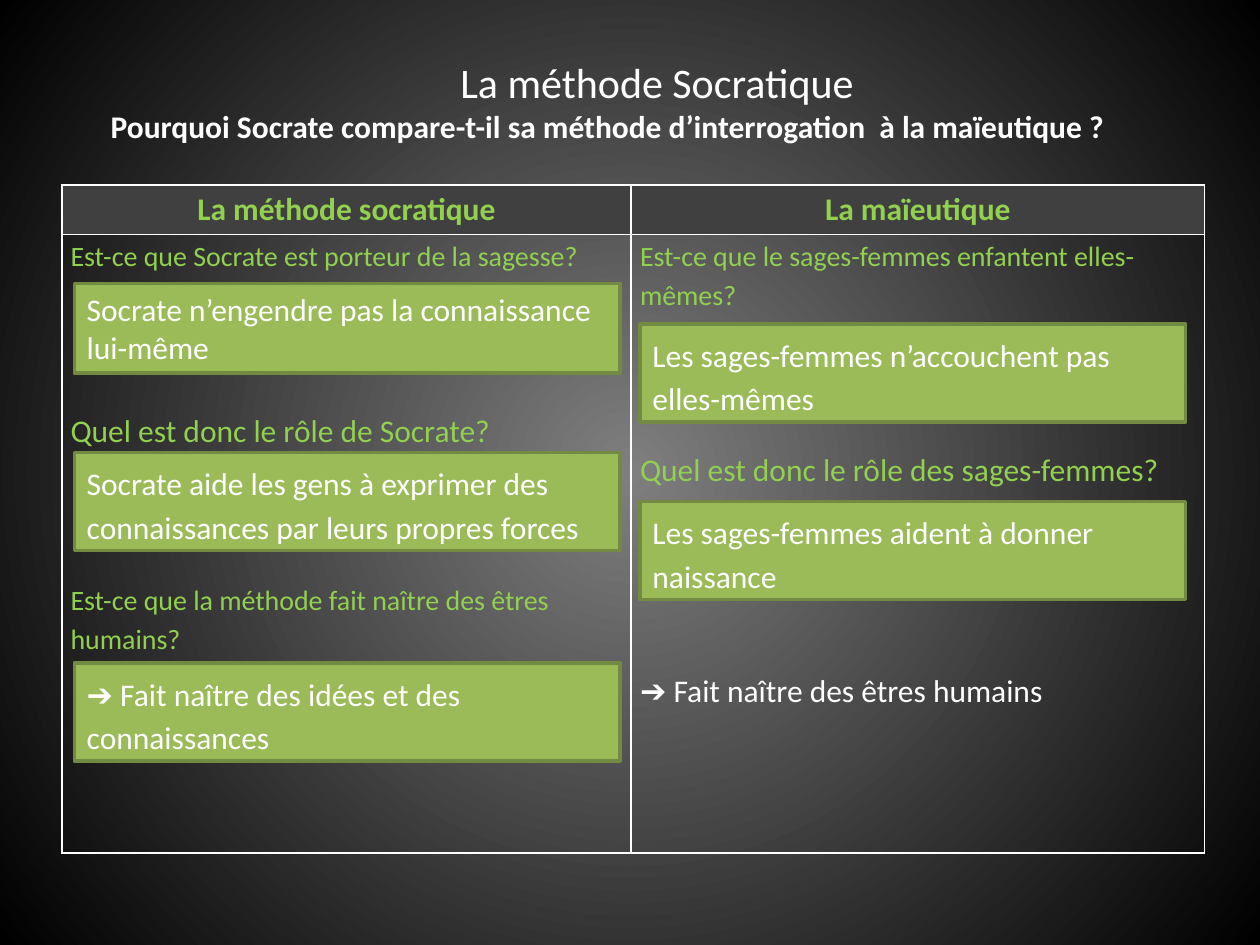
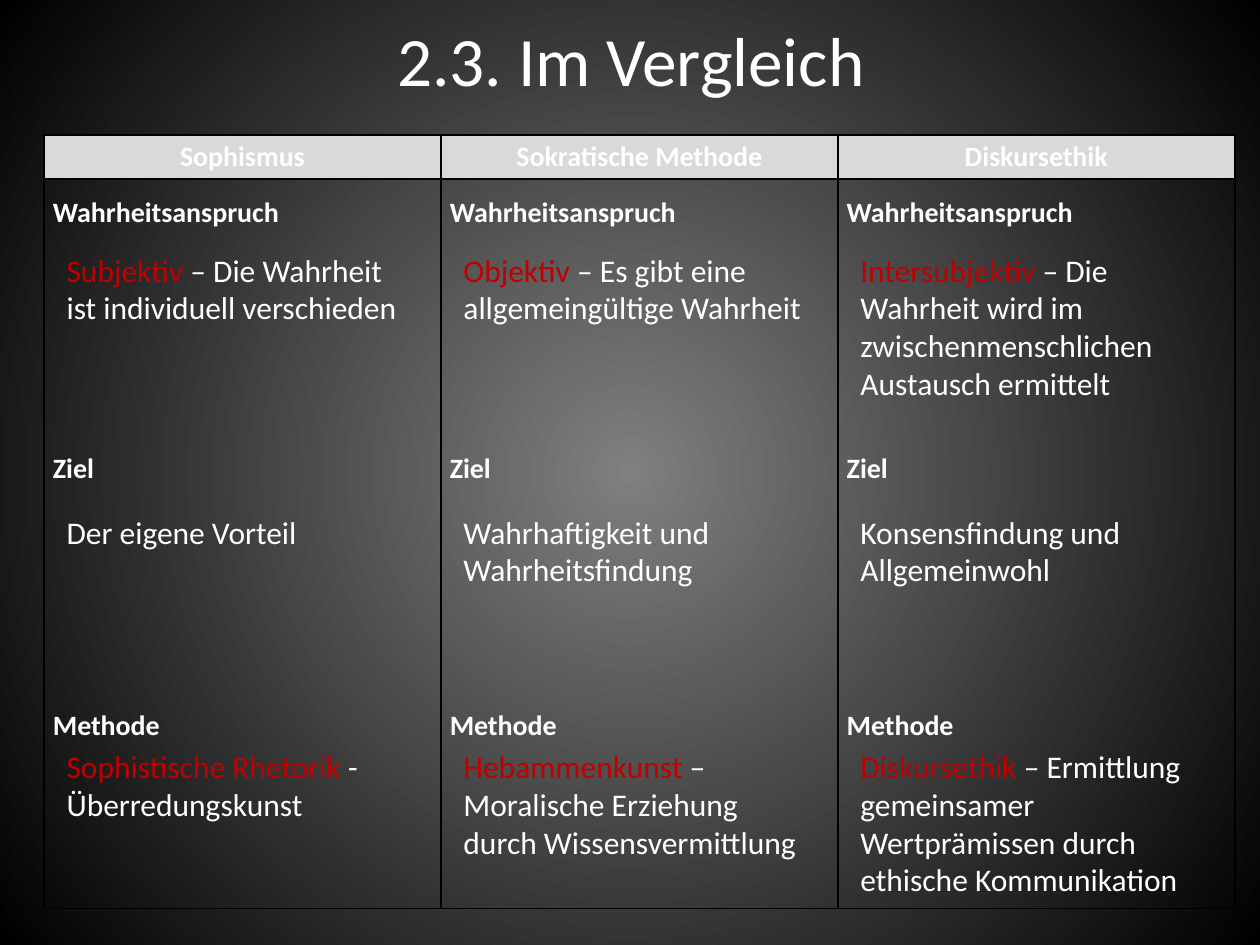
from dataclasses import dataclass

from lxml import etree
from pptx import Presentation
from pptx.dml.color import RGBColor
from pptx.enum.shapes import MSO_SHAPE
from pptx.enum.text import MSO_ANCHOR, MSO_AUTO_SIZE, PP_ALIGN
from pptx.oxml import parse_xml
from pptx.oxml.ns import nsdecls, qn
from pptx.util import Inches, Pt


@dataclass(frozen=True)
class Theme:
    font: str = "Calibri"
    white: str = "FFFFFF"
    black: str = "000000"
    glow: str = "7F7F7F"
    question: str = "92D050"
    answer_fill: str = "9BBB59"
    answer_line: str = "738A42"
    keyword: str = "C00000"
    dark_header: str = "404040"
    light_header: str = "D9D9D9"
    title: float = 39.6
    subtitle: float = 24
    body: float = 18
    small: float = 16


@dataclass(frozen=True)
class Line:
    """One paragraph; segments are (text, colour) pairs, before is a gap in points."""
    segments: tuple
    size: float
    bold: bool = False
    align: PP_ALIGN = PP_ALIGN.LEFT
    spacing: float = 1.0
    before: float = 0
    indent: float = 0


THEME = Theme()
LINE_FACTOR = 1.22  # line height of the font, in ems
CELL_INSET = 0.07

SOCRATES_SPACING = 1.15
SOCRATES_TABLE = (0.49, 1.47)
SOCRATES_COLUMNS = (4.52, 4.55)
SOCRATES_ROWS = (0.39, 4.91)
ANSWER_LEFTS = (0.59, 5.08)
ANSWER_WIDTH = 4.33

COMPARISON_SPACING = 1.5
COMPARISON_TABLE = (0.35, 1.07)
COMPARISON_COLUMN = 3.15
COMPARISON_ROWS = (0.35, 5.79)
COMPARISON_INSET = 0.08
TOPICS = ("Wahrheitsanspruch", "Ziel", "Methode")
TOPIC_TOPS = (1.94, 4.02, 5.88)
NOTE_WIDTH = 2.99

# For each topic: keyword, explanation and number of text lines, per column
NOTES = (
    (("Subjektiv", " – Die Wahrheit ist individuell verschieden", 2),
     ("Objektiv", " – Es gibt eine allgemeingültige Wahrheit", 2),
     ("Intersubjektiv",
      " – Die Wahrheit wird im zwischenmenschlichen Austausch ermittelt", 4)),
    (("", "Der eigene Vorteil", 1),
     ("", "Wahrhaftigkeit und Wahrheitsfindung", 2),
     ("", "Konsensfindung und Allgemeinwohl", 2)),
    (("Sophistische Rhetorik ", "- Überredungskunst", 2),
     ("Hebammenkunst", " – Moralische Erziehung durch Wissensvermittlung", 3),
     ("Diskursethik",
      " – Ermittlung gemeinsamer Wertprämissen durch ethische Kommunikation", 4)),
)

# For each column: top, height, line spacing and text of the answers
ANSWERS = (
    ((2.25, 0.71, 1.0, "Socrate n’engendre pas la connaissance lui-même"),
     (3.59, 0.78, SOCRATES_SPACING,
      "Socrate aide les gens à exprimer des connaissances par leurs propres forces"),
     (5.26, 0.78, SOCRATES_SPACING, "➔ Fait naître des idées et des connaissances")),
    ((2.57, 0.78, SOCRATES_SPACING, "Les sages-femmes n’accouchent pas elles-mêmes"),
     (3.98, 0.78, SOCRATES_SPACING, "Les sages-femmes aident à donner naissance")),
)


def rgb(colour):
    return RGBColor.from_string(colour)


def gap(*sizes, spacing):
    """Height in points of skipped lines of the given type sizes."""
    return round(sum(sizes) * LINE_FACTOR * spacing, 1)


def plain(text, size, colour=THEME.white, **options):
    return Line(((text, colour),), size, **options)


def write(frame, lines):
    frame.word_wrap = True
    for index, line in enumerate(lines):
        paragraph = frame.add_paragraph() if index else frame.paragraphs[0]
        paragraph.alignment = line.align
        paragraph.line_spacing = line.spacing
        paragraph.space_before = Pt(line.before)
        if line.indent:
            properties = paragraph._p.get_or_add_pPr()
            properties.set("marL", str(Inches(line.indent)))
            properties.set("indent", "0")
        paragraph.font.name = THEME.font
        paragraph.font.size = Pt(line.size)
        paragraph.font.bold = line.bold
        for text, colour in line.segments:
            run = paragraph.add_run()
            run.text = text
            if len(line.segments) > 1:
                run.font.color.rgb = rgb(colour)
            else:
                paragraph.font.color.rgb = rgb(colour)


def add_text(slide, box, lines, anchor=MSO_ANCHOR.TOP):
    shape = slide.shapes.add_textbox(*map(Inches, box))
    write(shape.text_frame, lines)
    shape.text_frame.vertical_anchor = anchor


def add_answer(slide, box, line):
    shape = slide.shapes.add_shape(MSO_SHAPE.RECTANGLE, *map(Inches, box))
    shape.shadow.inherit = False
    shape.fill.solid()
    shape.fill.fore_color.rgb = rgb(THEME.answer_fill)
    shape.line.color.rgb = rgb(THEME.answer_line)
    shape.line.width = Pt(2)
    write(shape.text_frame, [line])
    shape.text_frame.vertical_anchor = MSO_ANCHOR.TOP
    shape.text_frame.auto_size = MSO_AUTO_SIZE.SHAPE_TO_FIT_TEXT


def border_cell(cell, colour):
    properties = cell._tc.get_or_add_tcPr()
    for side in ("lnL", "lnR", "lnT", "lnB"):
        properties.append(parse_xml(
            f'<a:{side} {nsdecls("a")} w="{Pt(1)}"><a:solidFill>'
            f'<a:srgbClr val="{colour}"/></a:solidFill></a:{side}>'))


def add_table(slide, origin, widths, heights, cells, header_fill, border):
    """Table with a filled header row above see-through cells of lines."""
    size = (sum(widths), sum(heights))
    table = slide.shapes.add_table(
        len(heights), len(widths), *map(Inches, origin + size)).table
    table.first_row = table.horz_banding = False
    for column, width in zip(table.columns, widths):
        column.width = Inches(width)
    for row, height, row_lines in zip(table.rows, heights, cells):
        row.height = Inches(height)
        for cell, lines in zip(row.cells, row_lines):
            cell.margin_left = cell.margin_right = Inches(CELL_INSET)
            cell.margin_top = cell.margin_bottom = 0
            border_cell(cell, border)
            if row_lines is cells[0]:
                cell.fill.solid()
                cell.fill.fore_color.rgb = rgb(header_fill)
            else:
                cell.fill.background()
            write(cell.text_frame, lines)


def header_row(titles, size, colour):
    return [[plain(title, size, colour, bold=True, align=PP_ALIGN.CENTER,
                   spacing=SOCRATES_SPACING)] for title in titles]


def set_background(master):
    """Radial glow behind every slide."""
    fill = master.background.fill
    fill.gradient()
    for stop, position, colour in zip(
            fill.gradient_stops, (0, 1), (THEME.glow, THEME.black)):
        stop.position = position
        stop.color.rgb = rgb(colour)
    linear = next(master._element.iter(qn("a:lin")))
    radial = etree.Element(qn("a:path"), {"path": "circle"})
    etree.SubElement(radial, qn("a:fillToRect"),
                     {side: "50000" for side in "ltrb"})
    linear.getparent().replace(linear, radial)


def build_socratic_method(slide):
    body, small, spacing = THEME.body, THEME.small, SOCRATES_SPACING

    def question(text, size, *skipped):
        return plain(text, size, THEME.question, spacing=spacing,
                     before=gap(*skipped, spacing=spacing))

    socrates = [
        question("Est-ce que Socrate est porteur de la sagesse?", small),
        question("Quel est donc le rôle de Socrate?", body, body, body, body),
        question("Est-ce que la méthode fait naître des êtres humains?", small,
                 body, body, small),
    ]
    midwives = [
        question("Est-ce que le sages-femmes enfantent elles-mêmes?", small),
        question("Quel est donc le rôle des sages-femmes?", body, body, body, body),
        plain("➔ Fait naître des êtres humains", body, spacing=spacing,
              before=gap(body, body, body, body, spacing=spacing)),
    ]
    headers = header_row(("La méthode socratique", "La maïeutique"),
                         body, THEME.question)
    add_table(slide, SOCRATES_TABLE, SOCRATES_COLUMNS, SOCRATES_ROWS,
              [headers, [socrates, midwives]], THEME.dark_header, THEME.white)
    add_text(slide, (0.28, 0.39, 9.37, 0.81), [
        plain("La méthode Socratique", THEME.subtitle,
              align=PP_ALIGN.CENTER, indent=0.5),
        plain("Pourquoi Socrate compare-t-il sa méthode d’interrogation  "
              "à la maïeutique ?", body, bold=True, indent=0.5),
    ], MSO_ANCHOR.MIDDLE)
    for left, answers in zip(ANSWER_LEFTS, ANSWERS):
        for top, height, line_spacing, text in answers:
            add_answer(slide, (left, top, ANSWER_WIDTH, height),
                       plain(text, body, spacing=line_spacing))


def build_comparison(slide):
    add_text(slide, (0.51, 0.13, 9, 0.68),
             [plain("2.3. Im Vergleich", THEME.title, align=PP_ALIGN.CENTER)],
             MSO_ANCHOR.MIDDLE)
    titles = ("Sophismus", "Sokratische Methode", "Diskursethik")
    skipped = gap(*[THEME.small] * 4, spacing=COMPARISON_SPACING)
    topics = [plain(topic, THEME.small, bold=True, spacing=COMPARISON_SPACING,
                    before=skipped if index else 0)
              for index, topic in enumerate(TOPICS)]
    add_table(slide, COMPARISON_TABLE, (COMPARISON_COLUMN,) * len(titles),
              COMPARISON_ROWS,
              [header_row(titles, THEME.small, THEME.white), [topics] * len(titles)],
              THEME.light_header, THEME.black)
    for top, notes in zip(TOPIC_TOPS, NOTES):
        for column, (keyword, explanation, line_count) in enumerate(notes):
            left = COMPARISON_TABLE[0] + COMPARISON_INSET + column * COMPARISON_COLUMN
            segments = ((keyword, THEME.keyword), (explanation, THEME.white))
            add_text(slide, (left, top, NOTE_WIDTH, 0.1 + 0.3 * line_count),
                     [Line(segments if keyword else segments[1:], THEME.body)])


def main():
    presentation = Presentation()
    presentation.slide_width = Inches(10)
    presentation.slide_height = Inches(7.5)
    set_background(presentation.slide_master)
    blank = presentation.slide_layouts[6]
    for build in (build_socratic_method, build_comparison):
        build(presentation.slides.add_slide(blank))
    presentation.save("out.pptx")


if __name__ == "__main__":
    main()
